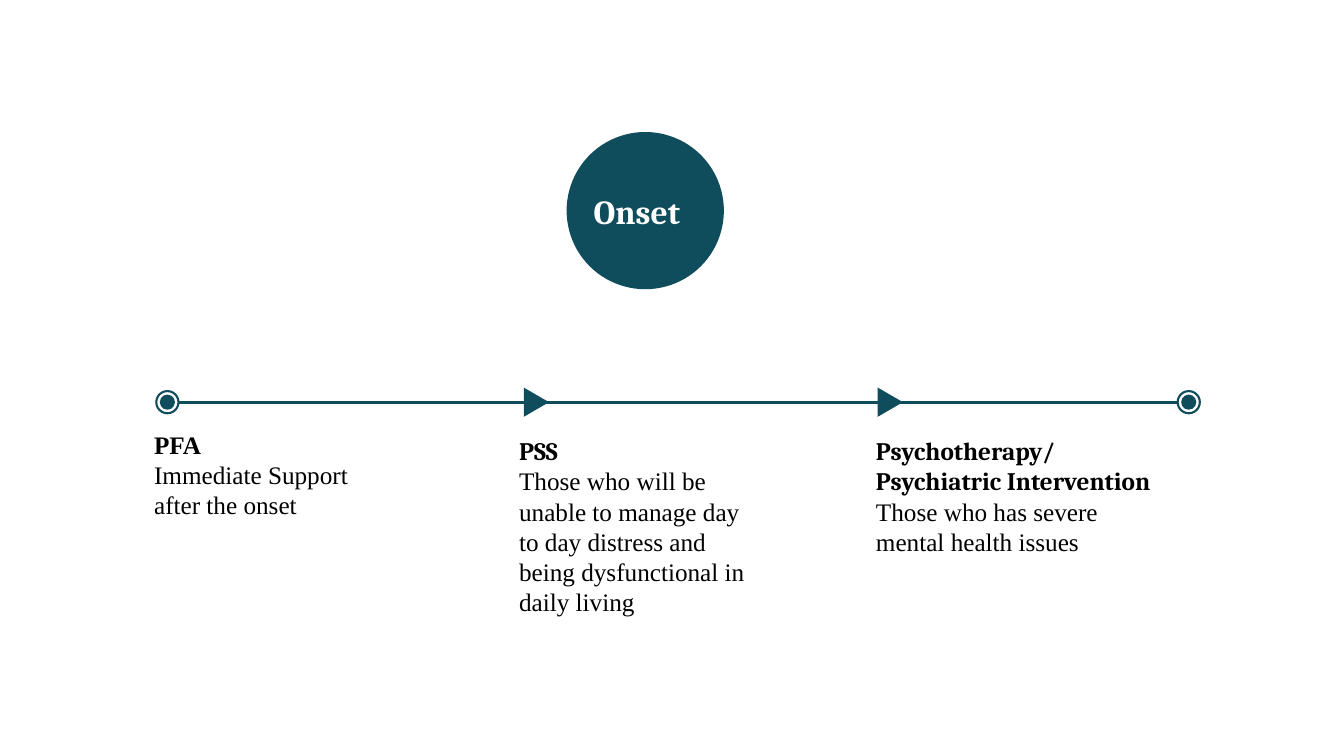
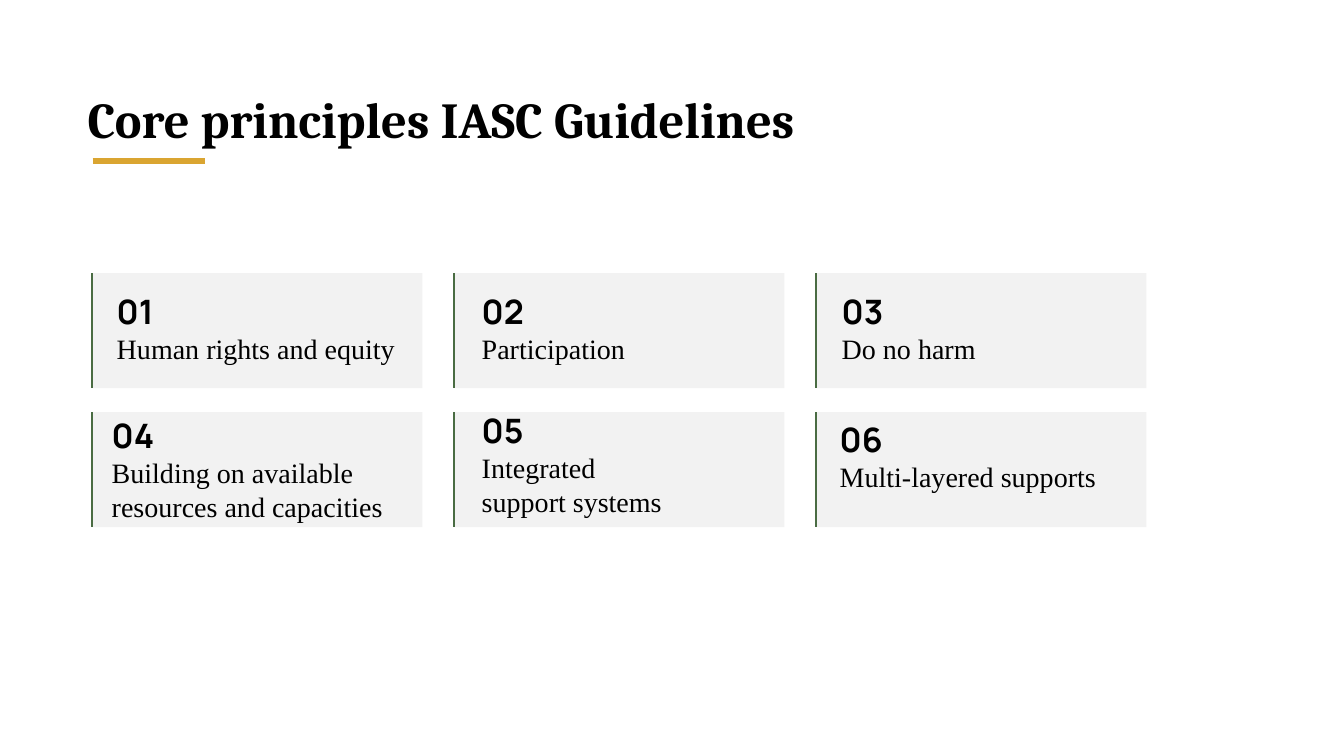
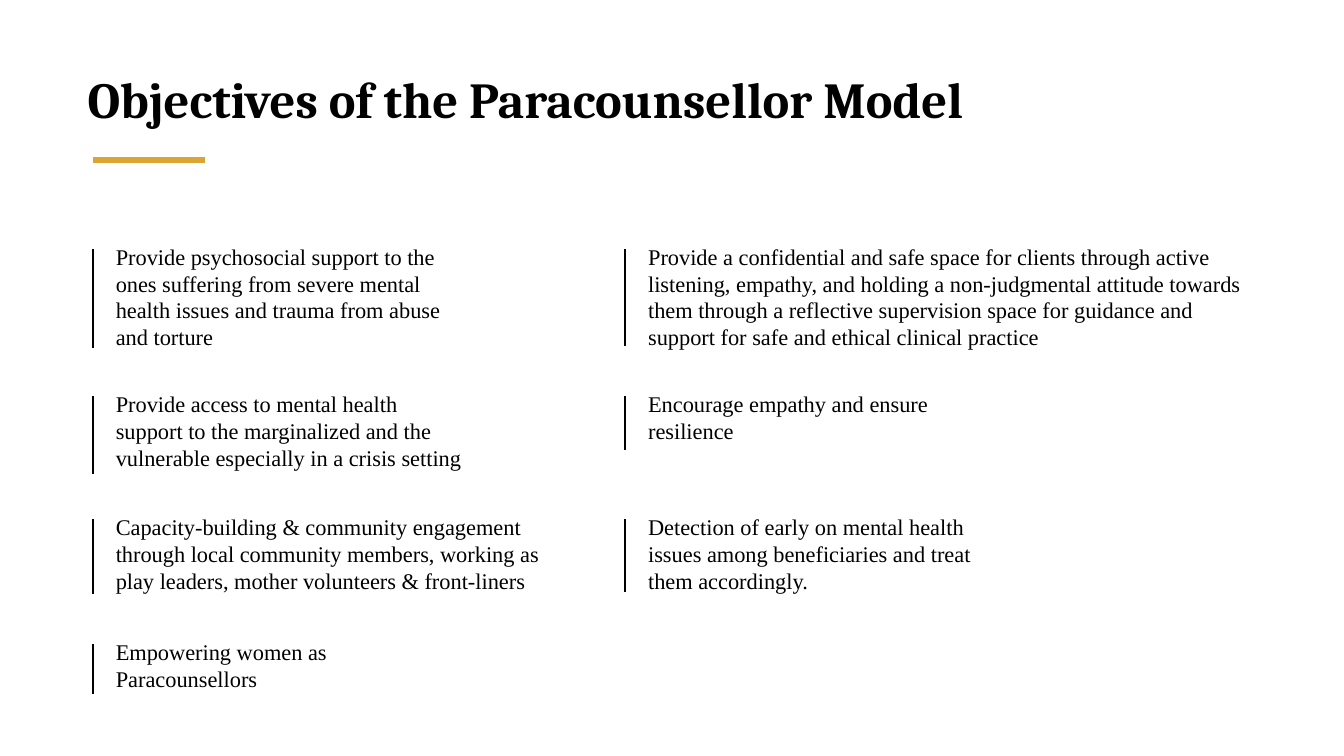
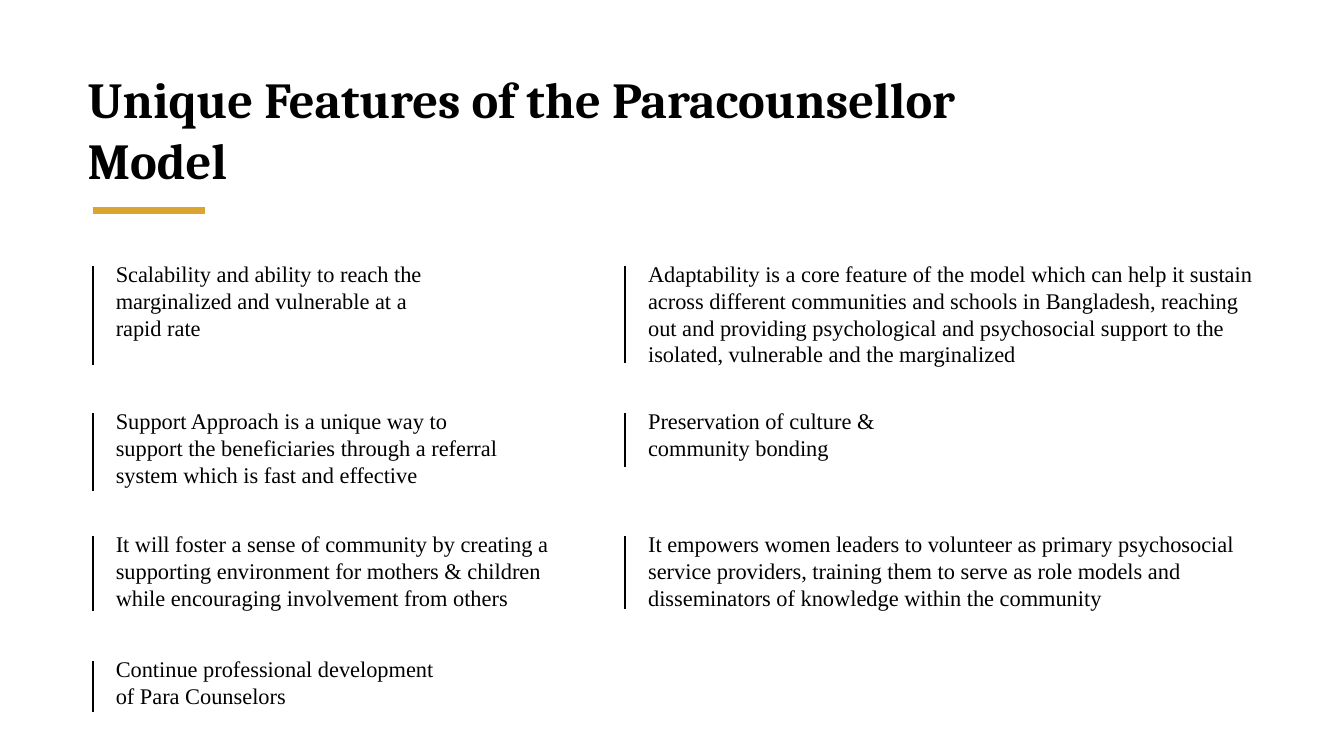
from dataclasses import dataclass

from lxml import etree
from pptx import Presentation
from pptx import util as u
from pptx.dml.color import RGBColor
from pptx.enum import shapes, text
from pptx.oxml import ns


@dataclass(frozen=True)
class Theme:
    # Colours
    ink: str = "000000"
    white: str = "FFFFFF"
    teal: str = "0F4C5C"
    gold: str = "DAA531"
    green: str = "4A6C43"
    panel: str = "F2F2F2"
    # Fonts
    heading: str = "Cambria"
    body: str = "Times New Roman"
    number: str = "Manrope"
    # Type sizes
    title_size: int = 36
    large_size: int = 24
    card_size: int = 20
    step_size: int = 18
    item_size: int = 16


T = Theme()
KIND = shapes.MSO_SHAPE


# Shared helpers
def rgb(value):
    return RGBColor.from_string(value)


def add_text(s, x, y, w, h, *paragraphs):
    """Each paragraph is (wording, font, size, bold[, colour])."""
    sp = s.shapes.add_textbox(*map(u.Inches, (x, y, w, h)))
    tf = sp.text_frame
    tf.word_wrap = True
    tf.auto_size = text.MSO_AUTO_SIZE.SHAPE_TO_FIT_TEXT
    for i, (wording, font, size, bold, *colour) in enumerate(paragraphs):
        p = tf.add_paragraph() if i else tf.paragraphs[0]
        p.text = wording
        r = p.runs[0]
        r.font.name, r.font.size, r.font.bold = font, u.Pt(size), bold
        r.font.color.rgb = rgb(colour[0] if colour else T.ink)


def add_shape(s, kind, x, y, w, h, fill, line=None):
    sp = s.shapes.add_shape(kind, *map(u.Inches, (x, y, w, h)))
    sp.shadow.inherit = False
    sp.fill.solid()
    sp.fill.fore_color.rgb = rgb(fill)
    if line:
        sp.line.color.rgb = rgb(line)
        sp.line.width = u.Pt(1.5)
    else:
        sp.line.fill.background()
    return sp


def add_line(s, x1, y1, x2, y2, colour, width=1.5):
    line = s.shapes.add_connector(
        shapes.MSO_CONNECTOR.STRAIGHT, *map(u.Inches, (x1, y1, x2, y2)))
    line.line.color.rgb = rgb(colour)
    line.line.width = u.Pt(width)
    etree.SubElement(line._element.spPr, ns.qn("a:effectLst"))


def new_slide(prs):
    s = prs.slides.add_slide(prs.slide_layouts[6])
    s.background.fill.solid()
    s.background.fill.fore_color.rgb = rgb(T.white)
    return s


def add_title(s, wording, y, w, h, rule_y):
    add_text(s, 0.77, y, w, h, (wording, T.heading, T.title_size, True))
    add_line(s, 0.92, rule_y, 2.03, rule_y, T.gold, 4.5)


# Timeline
def add_onset(s, x, y, size):
    add_shape(s, KIND.OVAL, x, y, size, size, T.teal)
    add_text(s, x + 0.17, y + 0.53, 1.21, 0.5,
             ("Onset", T.heading, T.large_size, True, T.white))


def add_end_marker(s, cx, cy):
    for size, fill, line in ((0.22, T.white, T.teal), (0.15, T.teal, None)):
        add_shape(s, KIND.OVAL, cx - size / 2, cy - size / 2, size, size, fill, line)


def add_arrow_marker(s, cx, cy):
    w, h = 0.29, 0.25
    sp = add_shape(s, KIND.ISOSCELES_TRIANGLE, cx - w / 2, cy - h / 2, w, h, T.teal)
    sp.rotation = 90


def add_timeline(s, left, right, y, arrows, steps):
    add_line(s, left, y, right, y, T.teal, 2.25)
    for cx in (left, right):
        add_end_marker(s, cx, y)
    for cx in arrows:
        add_arrow_marker(s, cx, y)
    for x, dy, w, h, name, font, detail in steps:
        add_text(s, x, y + dy, w, h, (name, font, T.step_size, True),
                 (detail, T.body, T.step_size, False))


def timeline_slide(prs):
    s = new_slide(prs)
    add_onset(s, 5.62, 1.31, 1.56)
    add_timeline(s, 1.66, 11.79, 3.99, (5.32, 8.83), (
        (1.43, 0.22, 2.29, 1.01, "PFA", T.body,
         "Immediate Support after the onset"),
        (5.05, 0.28, 2.51, 1.92, "PSS", T.heading,
         "Those who will be unable to manage day to day distress and being "
         "dysfunctional in daily living"),
        (8.59, 0.28, 2.96, 1.31, "Psychotherapy/Psychiatric Intervention", T.heading,
         "Those who has severe mental health issues"),
    ))


# Numbered cards
def add_card(s, x, y, w, h, number, wording, dx, dy, text_w, text_h):
    add_shape(s, KIND.RECTANGLE, x, y, w, h, T.panel)
    add_line(s, x, y, x, y + h, T.green)
    add_text(s, x + dx, y + dy, text_w, text_h,
             (f"{number:02}", T.number, T.large_size, True),
             (wording, T.body, T.card_size, False))


def principles_slide(prs):
    s = new_slide(prs)
    add_title(s, "Core principles IASC Guidelines", 0.82, 9.03, 0.71, 1.6)
    # Wording, then offset and size of the text in its card
    cards = (
        ("Human rights and equity", 0.15, 0.13, 3, 0.84),
        ("Participation", 0.18, 0.13, 1.67, 0.84),
        ("Do no harm", 0.16, 0.13, 1.67, 0.84),
        ("Building on available resources and capacities", 0.1, -0.02, 3, 1.18),
        ("Integrated support systems", 0.18, -0.07, 2.06, 1.18),
        ("Multi-layered supports", 0.14, 0.02, 3, 0.84),
    )
    for i, card in enumerate(cards):
        row, col = divmod(i, 3)
        add_card(s, 0.91 + col * 3.59, 2.71 + row * 1.38, 3.28, 1.14, i + 1, *card)


# Barred lists in two columns
COLUMNS = (0.92, 6.2)
ROWS = (0, 1.46, 2.68, 3.92)
BAR_HEIGHTS = ((0.98, 0.77, 0.74, 0.5), (0.96, 0.53, 0.72))


def add_item(s, x, y, bar_h, wording, w, lines):
    add_line(s, x, y, x, y + bar_h, T.ink)
    add_text(s, x + 0.13, y - 0.11, w, 0.1 + 0.27 * lines,
             (wording, T.body, T.item_size, False))


def list_slide(prs, title, title_w, title_h, rule_y, top, columns):
    s = new_slide(prs)
    add_title(s, title, 0.63, title_w, title_h, rule_y)
    for x, heights, items in zip(COLUMNS, BAR_HEIGHTS, columns):
        for row_y, bar_h, item in zip(ROWS, heights, items):
            add_item(s, x, top + row_y, bar_h, *item)


# Wording, width and line count of each item
OBJECTIVES = (
    (
        ("Provide psychosocial support to the ones suffering from severe mental "
         "health issues and trauma from abuse and torture", 3.46, 4),
        ("Provide access to mental health support to the marginalized and the "
         "vulnerable especially in a crisis setting", 3.7, 3),
        ("Capacity-building & community engagement through local community members, "
         "working as play leaders, mother volunteers & front-liners", 4.63, 3),
        ("Empowering women as Paracounsellors", 3.35, 2),
    ),
    (
        ("Provide a confidential and safe space for clients through active listening, "
         "empathy, and holding a non-judgmental attitude towards them through a "
         "reflective supervision space for guidance and support for safe and ethical "
         "clinical practice", 6.24, 4),
        ("Encourage empathy and ensure resilience", 3.46, 2),
        ("Detection of early on mental health issues among beneficiaries and treat "
         "them accordingly.", 3.46, 3),
    ),
)
FEATURES = (
    (
        ("Scalability and ability to reach the marginalized and vulnerable at a "
         "rapid rate", 3.46, 3),
        ("Support Approach is a unique way to support the beneficiaries through a "
         "referral system which is fast and effective", 4.06, 3),
        ("It will foster a sense of community by creating a supporting environment "
         "for mothers & children while encouraging involvement from others", 4.63, 3),
        ("Continue professional development of Para Counselors", 3.35, 2),
    ),
    (
        ("Adaptability is a core feature of the model which can help it sustain across "
         "different communities and schools in Bangladesh, reaching out and providing "
         "psychological and psychosocial support to the isolated, vulnerable and the "
         "marginalized", 6.24, 4),
        ("Preservation of culture & community bonding", 3.46, 2),
        ("It empowers women leaders to volunteer as primary psychosocial service "
         "providers, training them to serve as role models and disseminators of "
         "knowledge within the community", 6.05, 3),
    ),
)


def main():
    prs = Presentation()
    prs.slide_width, prs.slide_height = u.Inches(13.33), u.Inches(7.5)
    timeline_slide(prs)
    principles_slide(prs)
    list_slide(prs, "Objectives of the Paracounsellor Model",
               10.81, 0.71, 1.59, 2.47, OBJECTIVES)
    list_slide(prs, "Unique Features of the Paracounsellor Model",
               9.25, 1.31, 2.09, 2.64, FEATURES)
    prs.save("out.pptx")


if __name__ == "__main__":
    main()
